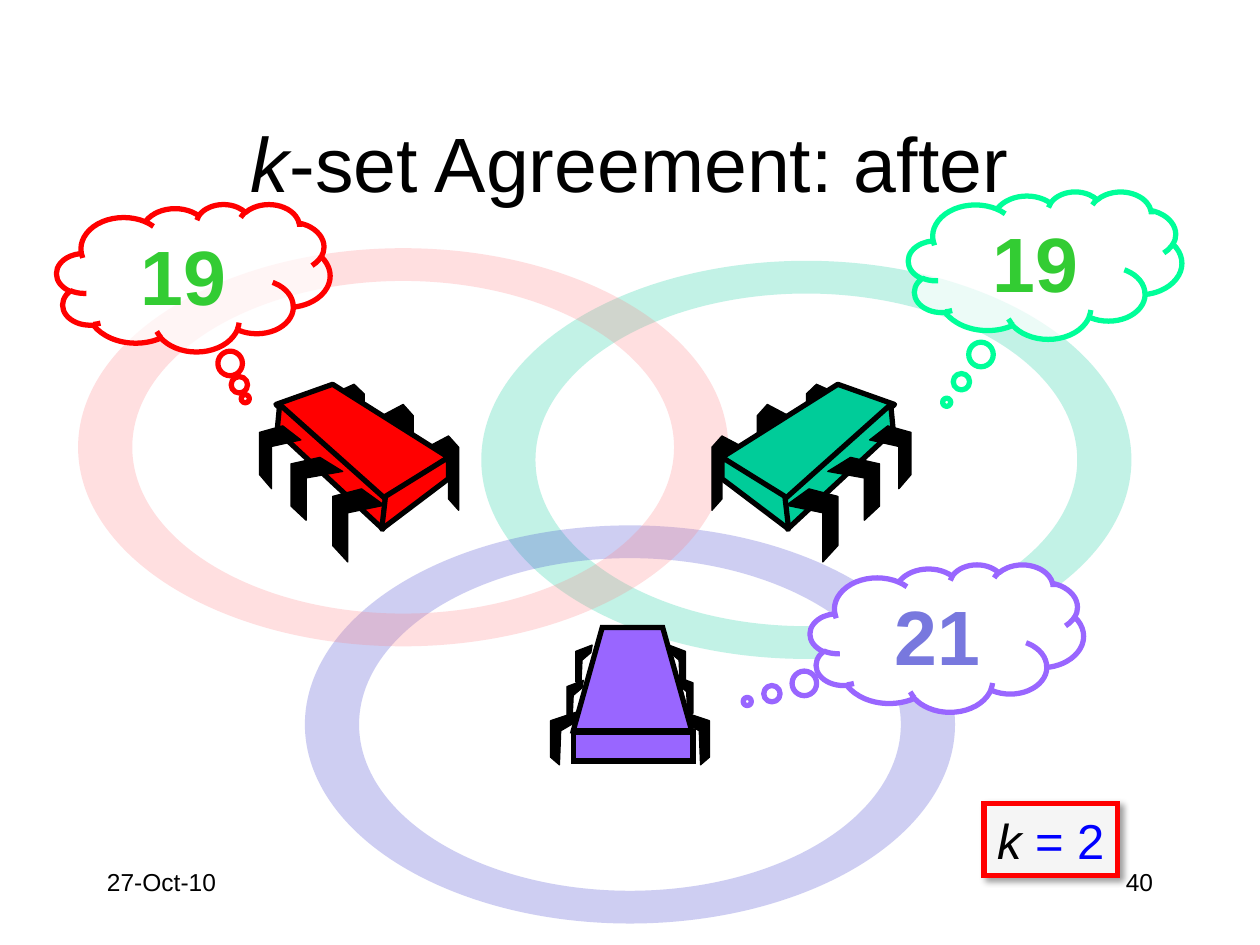
"""Build the slide showing k-set agreement after the decision."""
from lxml import etree
from pptx import Presentation
from pptx import util as u
from pptx.dml.color import RGBColor
from pptx.enum import shapes, text
from pptx.oxml import ns

CELL = u.Inches(1)
COLUMNS, ROWS = 10, 7.5
FONT = "Arial"

BLACK = RGBColor(0x00, 0x00, 0x00)
WHITE = RGBColor(0xFF, 0xFF, 0xFF)
RED = RGBColor(0xFF, 0x00, 0x00)
PINK = RGBColor(0xFF, 0x7C, 0x80)
TEAL = RGBColor(0x00, 0xCC, 0x99)
MINT = RGBColor(0x00, 0xFF, 0x99)
NAVY = RGBColor(0x33, 0x33, 0xCC)
BLUE = RGBColor(0x00, 0x00, 0xFF)
PURPLE = RGBColor(0x99, 0x66, 0xFF)
GREEN = RGBColor(0x33, 0xCC, 0x33)
LAVENDER = RGBColor(0x78, 0x78, 0xDE)

RING_RADII = (2.58, 1.58)
HOLE_RADII = (2.15, 1.32)
QUARTER_STARTS = (180, 270, 0, 90)
DEGREE = 60000
MIRROR_SUM = 9.29

FAR_LEG = [(0, .09), (.17, 0), (.25, .09), (.25, .59), (.17, .5), (.17, .17), (0, .25)]
NEAR_LEG = [(.23, 0), (.41, .13), (.12, .19), (.12, .58), (0, .45), (0, .06)]
FRONT_LEG = [(0, 0), (.21, .07), (.21, .36), (.14, .42), (.13, .15), (.01, .08)]
BACK_LEG = [(0, 0), (.13, .05), (.13, .29), (.09, .33), (.08, .12), (.01, .06)]

FAR_PLACES = [(3.39, 3.46, 1, 1), (3.03, 3.21, 1, 1), (2.64, 3.05, 1, .85)]
NEAR_PLACES = [(2.64, 3.88, 1, 1), (2.31, 3.63, 1, .86), (2.06, 3.38, .8, .86)]
SIDE_BODY = [
    [(2.64, 3.05), (3.56, 3.63), (3.04, 3.97), (2.19, 3.21)],
    [(2.22, 3.21), (3.06, 3.96), (3.04, 4.2), (2.2, 3.42)],
    [(3.56, 3.63), (3.56, 3.8), (3.03, 4.2), (3.06, 3.94)],
]


def cells(*values):
    """Turn grid units into slide lengths."""
    return [round(value * CELL) for value in values]


def paint(shape, fill, line=None, width=3.0, opacity=100, sharp=False):
    """Set fill, outline, corners and opacity, without a shadow."""
    shape.shadow.inherit = False
    shape.fill.solid()
    shape.fill.fore_color.rgb = fill
    if opacity < 100:
        color = shape.fill._xPr.find(".//" + ns.qn("a:srgbClr"))
        etree.SubElement(color, ns.qn("a:alpha"), val=str(opacity * 1000))
    if line is None:
        shape.line.fill.background()
    else:
        shape.line.color.rgb = line
        shape.line.width = u.Pt(width)
    if sharp:
        outline = shape._element.spPr.find(ns.qn("a:ln"))
        etree.SubElement(outline, ns.qn("a:miter"), lim="800000")


def write(frame, runs, size, align, anchor=text.MSO_ANCHOR.TOP, wrap=True):
    """Write one paragraph from (words, colour, italic, bold) runs."""
    frame.word_wrap = wrap
    frame.vertical_anchor = anchor
    paragraph = frame.paragraphs[0]
    paragraph.alignment = align
    for words, color, italic, bold in runs:
        run = paragraph.add_run()
        run.text = words
        run.font.name, run.font.size = FONT, u.Pt(size)
        run.font.bold, run.font.italic = bold, italic
        run.font.color.rgb = color


def add_label(slide, box, runs, size, align, anchor=text.MSO_ANCHOR.TOP):
    """Add a line of plain text."""
    label = slide.shapes.add_textbox(*cells(*box))
    write(label.text_frame, runs, size, align, anchor)


def add_outline(slide, *contours):
    """Add one freeform made of closed contours."""
    first, *others = [[cells(*point) for point in contour] for contour in contours]
    builder = slide.shapes.build_freeform(*first[0], scale=1.0)
    builder.add_line_segments(first[1:], close=True)
    for contour in others:
        builder.move_to(*contour[0])
        builder.add_line_segments(contour[1:], close=True)
    return builder.convert_to_shape()


def quarter_points(center, radii):
    """List the ends of an ellipse's quarters, clockwise from the left."""
    (x, y), (across, down) = center, radii
    return [(x - across, y), (x, y - down), (x + across, y), (x, y + down), (x - across, y)]


def add_ring(slide, center, color):
    """Add a translucent ring whose sides are bent into quarter arcs."""
    both_radii = (RING_RADII, HOLE_RADII)
    ring = add_outline(slide, *[quarter_points(center, radii) for radii in both_radii])
    sides = list(ring._element.spPr.iter(ns.qn("a:lnTo")))
    turns = [(radii, start) for radii in both_radii for start in QUARTER_STARTS]
    for side, (radii, start) in zip(sides, turns):
        across, down = cells(*radii)
        arc = etree.Element(ns.qn("a:arcTo"), wR=str(across), hR=str(down),
                            stAng=str(start * DEGREE), swAng=str(90 * DEGREE))
        side.getparent().replace(side, arc)
    paint(ring, color, opacity=24)


def mirrored(points, flip):
    """Reflect points across the axis between the two side robots."""
    return [(MIRROR_SUM - x, y) for x, y in points] if flip else points


def add_leg(slide, leg, x, y, across=1, down=1, flip=False):
    """Add a black leg, scaled and possibly mirrored."""
    points = [(x + across * dx, y + down * dy) for dx, dy in leg]
    paint(add_outline(slide, mirrored(points, flip)), BLACK, BLACK, .75)


def add_side_robot(slide, color, flip=False):
    """Add a robot seen from the side, back legs first."""
    for place in FAR_PLACES:
        add_leg(slide, FAR_LEG, *place, flip=flip)
    for face in SIDE_BODY:
        paint(add_outline(slide, mirrored(face, flip)), color, BLACK)
    for place in NEAR_PLACES:
        add_leg(slide, NEAR_LEG, *place, flip=flip)


def add_front_robot(slide, color):
    """Add the robot seen from the front."""
    for leg, x, y, side in ((FRONT_LEG, 5.42, 5.65, 1), (BACK_LEG, 5.37, 5.37, 1),
                            (FRONT_LEG, 4.58, 5.65, -1), (BACK_LEG, 4.63, 5.4, -1)):
        add_leg(slide, leg, x, y, side)
    top = add_outline(slide, [(4.55, 5.8), (4.78, 4.98), (5.26, 4.98), (5.49, 5.8)])
    paint(top, color, BLACK, sharp=True)
    front = slide.shapes.add_shape(shapes.MSO_SHAPE.RECTANGLE, *cells(4.55, 5.81, .95, .23))
    paint(front, color, BLACK, sharp=True)
    for x, side in ((5.31, 1), (4.7, -1)):
        add_leg(slide, BACK_LEG, x, 5.12, side)


def add_thought(slide, corner, tail, number, ink, line, opacity=70):
    """Add a thought cloud holding the chosen number."""
    cloud = slide.shapes.add_shape(shapes.MSO_SHAPE.CLOUD_CALLOUT, *cells(*corner, 2.17, 1.17))
    cloud.adjustments[0], cloud.adjustments[1] = tail
    paint(cloud, WHITE, line, opacity=opacity)
    write(cloud.text_frame, [(number, ink, False, True)], 44,
          text.PP_ALIGN.CENTER, text.MSO_ANCHOR.MIDDLE)


def add_k_box(slide):
    """Add the framed value of k with its soft shadow."""
    box = slide.shapes.add_shape(shapes.MSO_SHAPE.RECTANGLE, *cells(7.81, 6.38, 1.06, .57))
    paint(box, WHITE, RED, opacity=90, sharp=True)
    effects = box._element.spPr.find(ns.qn("a:effectLst"))
    shadow = etree.SubElement(effects, ns.qn("a:outerShdw"), blurRad=str(u.Pt(4)),
                              dist=str(u.Pt(3)), dir=str(45 * DEGREE), algn="tl",
                              rotWithShape="0")
    color = etree.SubElement(shadow, ns.qn("a:srgbClr"), val=str(BLACK))
    etree.SubElement(color, ns.qn("a:alpha"), val="40000")
    write(box.text_frame, [("k ", BLACK, True, False), ("= 2", BLUE, False, False)], 28,
          text.PP_ALIGN.CENTER, wrap=False)
    box.text_frame.auto_size = text.MSO_AUTO_SIZE.SHAPE_TO_FIT_TEXT


def main():
    """Build and save the slide."""
    deck = Presentation()
    deck.slide_width, deck.slide_height = cells(COLUMNS, ROWS)
    slide = deck.slides.add_slide(deck.slide_layouts[6])

    for center, color in (((6.4, 3.65), TEAL), ((5, 5.75), NAVY), ((3.2, 3.55), PINK)):
        add_ring(slide, center, color)
    add_front_robot(slide, PURPLE)
    add_thought(slide, (.45, 1.62), (.19, .82), "19", GREEN, RED)
    add_thought(slide, (7.21, 1.52), (-.36, .93), "19", GREEN, MINT)
    add_side_robot(slide, RED)
    add_side_robot(slide, TEAL, flip=True)
    add_thought(slide, (6.43, 4.48), (-.73, .43), "21", LAVENDER, PURPLE, opacity=100)

    add_label(slide, (.75, 6.83, 2.08, .5), [("27-Oct-10", BLACK, False, False)], 14,
              text.PP_ALIGN.LEFT)
    add_label(slide, (7.17, 6.83, 2.08, .5), [("40", BLACK, False, False)], 14,
              text.PP_ALIGN.RIGHT)
    add_label(slide, (.75, .66, 8.5, 1.25),
              [("k", BLACK, True, False), ("-set Agreement: after", BLACK, False, False)], 44,
              text.PP_ALIGN.CENTER, text.MSO_ANCHOR.MIDDLE)
    add_k_box(slide)
    deck.save("out.pptx")


if __name__ == "__main__":
    main()
